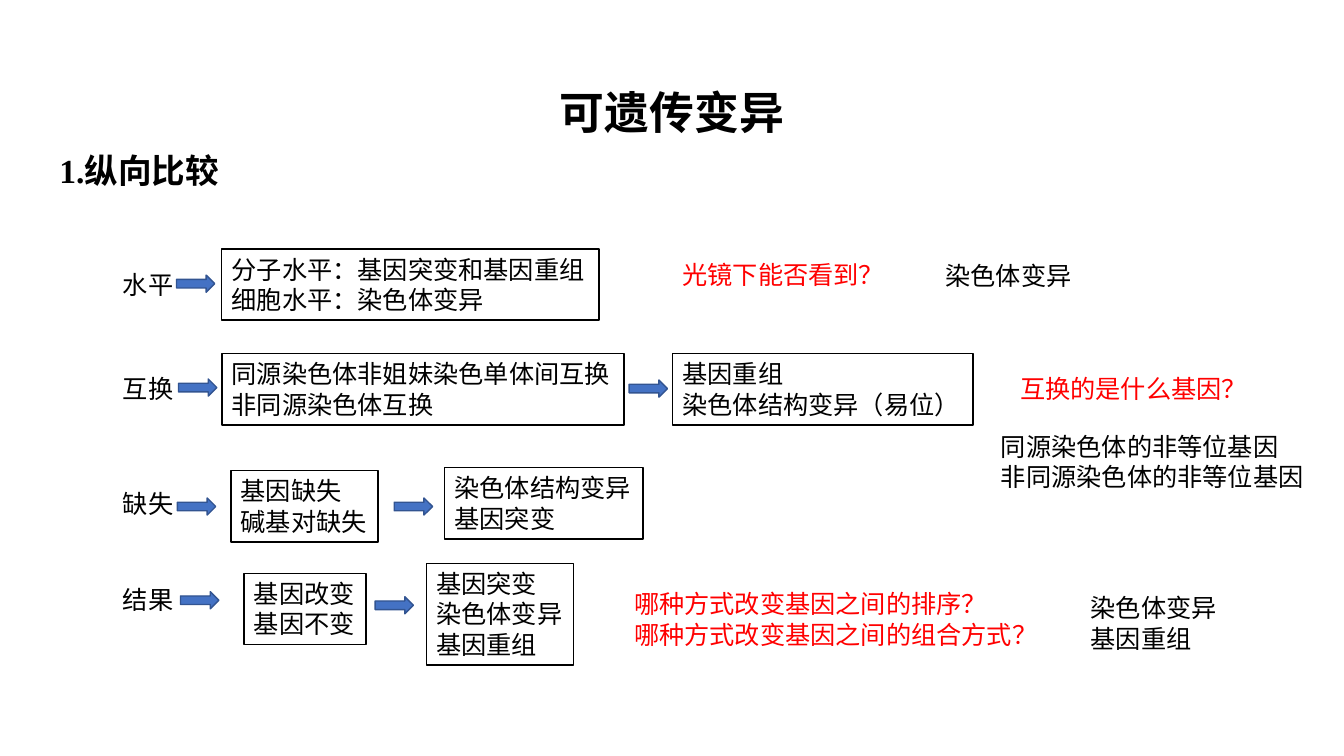
from pptx import Presentation
from pptx.dml.color import RGBColor
from pptx.enum.shapes import MSO_SHAPE as SHAPE
from pptx.enum.text import MSO_ANCHOR as ANCHOR, PP_ALIGN as ALIGN
from pptx.oxml.ns import qn
from pptx.util import Inches, Pt
from lxml.etree import SubElement

BLACK = RGBColor(0x00, 0x00, 0x00)
RED = RGBColor(0xFF, 0x00, 0x00)
BLUE = RGBColor(0x44, 0x72, 0xC4)
DARK_BLUE = RGBColor(0x32, 0x54, 0x91)
CJK_FONT = "Noto Sans CJK SC"

# Grid of tenths of an inch
CELL = Inches(0.1)
LABEL_COL = 11.2
LINE_ROWS = 3.03
PAD_ROWS = 1
ARROW_SIZE = (3.8, 1.7)


def grid(*cells):
    return [round(c * CELL) for c in cells]


def add_run(p, text, size, color, font=CJK_FONT, bold=False):
    r = p.add_run()
    r.text = text
    r.font.size = Pt(size)
    r.font.name = font
    r.font.bold = bold
    r.font.color.rgb = color
    SubElement(r.font._element, qn("a:ea"), typeface=CJK_FONT)


def fill_lines(tf, lines, color):
    tf.word_wrap = False
    tf.vertical_anchor = ANCHOR.TOP
    for i, line in enumerate(lines):
        p = tf.paragraphs[0] if i == 0 else tf.add_paragraph()
        p.alignment = ALIGN.LEFT
        p.line_spacing = Pt(21.6)
        add_run(p, line, 18, color)


def add_heading(slide, place, text, size, font, align, gap=0):
    tf = slide.shapes.add_textbox(*grid(*place)).text_frame
    tf.word_wrap = align != ALIGN.CENTER
    p = tf.paragraphs[0]
    p.alignment = align
    p.line_spacing = 1.5
    p.space_before = p.space_after = Pt(gap)
    add_run(p, text, size, BLACK, font, bold=True)


def add_note(slide, col, row, width, lines, color=BLACK):
    height = len(lines) * LINE_ROWS + PAD_ROWS
    sp = slide.shapes.add_textbox(*grid(col, row, width, height))
    fill_lines(sp.text_frame, lines, color)


def add_box(slide, col, row, width, lines):
    height = len(lines) * LINE_ROWS + PAD_ROWS
    sp = slide.shapes.add_shape(SHAPE.RECTANGLE, *grid(col, row, width, height))
    sp.shadow.inherit = False
    sp.fill.background()
    sp.line.color.rgb = BLACK
    sp.line.width = Pt(1)
    fill_lines(sp.text_frame, lines, BLACK)


def add_arrow(slide, col, row):
    sp = slide.shapes.add_shape(SHAPE.RIGHT_ARROW, *grid(col, row, *ARROW_SIZE))
    sp.shadow.inherit = False
    sp.fill.solid()
    sp.fill.fore_color.rgb = BLUE
    sp.line.color.rgb = DARK_BLUE
    sp.line.width = Pt(1)


def main():
    prs = Presentation()
    prs.slide_width, prs.slide_height = Inches(13.33), Inches(7.5)
    slide = prs.slides.add_slide(prs.slide_layouts[6])

    # Headings
    add_heading(slide, (4.9, 12.4, 117.6, 6.4), "1.纵向比较", 24,
                "Times New Roman", ALIGN.JUSTIFY)
    add_heading(slide, (54.4, 5.2, 24.5, 8.1), "可遗传变异", 32,
                "Cambria", ALIGN.CENTER, gap=13)

    # Row labels
    for row, label in ((26.2, "水平"), (36.5, "互换"), (48, "缺失"), (57.5, "结果")):
        add_note(slide, LABEL_COL, row, 7.1, [label])

    # Framed statements
    for box in (
        (22, 24.7, 37.4, ["分子水平：基因突变和基因重组", "细胞水平：染色体变异"]),
        (22, 35.1, 39.9, ["同源染色体非姐妹染色单体间互换", "非同源染色体互换"]),
        (66.7, 35.1, 29.8, ["基因重组", "染色体结构变异（易位）"]),
        (22.9, 46.7, 14.6, ["基因缺失", "碱基对缺失"]),
        (44.1, 46.4, 19.7, ["染色体结构变异", "基因突变"]),
        (24.2, 56.9, 12.1, ["基因改变", "基因不变"]),
        (42.3, 55.9, 14.6, ["基因突变", "染色体变异", "基因重组"]),
    ):
        add_box(slide, *box)

    # Arrows after the labels, then between the boxes
    for col, row in ((17.5, 27.3), (17.7, 37.6), (17.6, 49.4), (17.9, 58.7),
                     (62.4, 37.7), (39.1, 49.4), (37.2, 59.2)):
        add_arrow(slide, col, row)

    # Questions
    for question in (
        (66.7, 25.2, 22.2, ["光镜下能否看到？"]),
        (100.2, 36.5, 24.7, ["互换的是什么基因？"]),
        (61.9, 57.9, 42.4, ["哪种方式改变基因之间的排序？", "哪种方式改变基因之间的组合方式？"]),
    ):
        add_note(slide, *question, color=RED)

    # Answers
    for answer in (
        (92.8, 25.3, 14.6, ["染色体变异"]),
        (98.3, 42.3, 32.3, ["同源染色体的非等位基因", "非同源染色体的非等位基因"]),
        (107.2, 58.3, 14.6, ["染色体变异", "基因重组"]),
    ):
        add_note(slide, *answer)

    prs.save("out.pptx")


if __name__ == "__main__":
    main()
